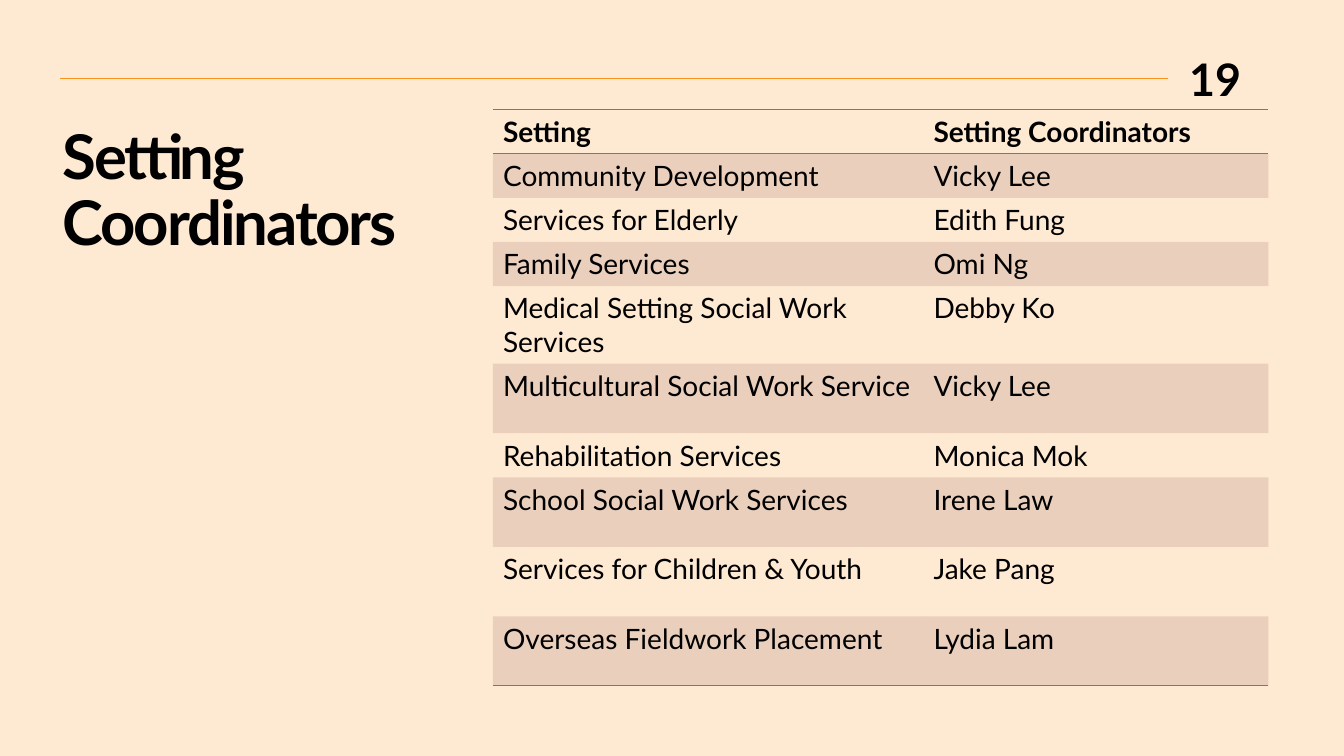
from lxml import etree
from pptx import Presentation
from pptx.dml.color import RGBColor
from pptx.enum.shapes import MSO_CONNECTOR
from pptx.enum.text import MSO_ANCHOR, MSO_AUTO_SIZE, PP_ALIGN
from pptx.oxml.ns import qn
from pptx.util import Inches, Pt

STRAIGHT = MSO_CONNECTOR.STRAIGHT
TOP = MSO_ANCHOR.TOP
FIXED = MSO_AUTO_SIZE.NONE
LEFT, RIGHT = PP_ALIGN.LEFT, PP_ALIGN.RIGHT

COLORS = {"paper": "FEE9D2", "ink": "000000", "accent": "F8931D", "rose": "9C6A6A"}
FONT = "Lato"
PLAIN_TABLE = "{2D5ABB26-0587-4C30-8999-92F81FD0307C}"

COORDINATORS = [
    ("Setting", "Setting Coordinators"),
    ("Community Development", "Vicky Lee"),
    ("Services for Elderly", "Edith Fung"),
    ("Family Services", "Omi Ng"),
    ("Medical Setting Social Work Services", "Debby Ko"),
    ("Multicultural Social Work Service", "Vicky Lee"),
    ("Rehabilitation Services", "Monica Mok"),
    ("School Social Work Services", "Irene Law"),
    ("Services for Children & Youth", "Jake Pang"),
    ("Overseas Fieldwork Placement", "Lydia Lam"),
]
TALL_ROWS = {4, 5, 7, 8, 9}


def color(name):
    return RGBColor.from_string(COLORS[name])


def write(frame, text, size, bold=False, align=LEFT, line=1.0, after=0, tracking=None):
    para = frame.paragraphs[0]
    para.alignment = align
    para.line_spacing = line
    para.space_before = Pt(0)
    para.space_after = Pt(after)
    span = para.add_run()
    span.text = text
    span.font.name = FONT
    span.font.size = Pt(size)
    span.font.bold = bold
    span.font.color.rgb = color("ink")
    if tracking is not None:
        span._r.get_or_add_rPr().set("spc", str(round(tracking * 100)))


class Page:
    def __init__(self, deck):
        self.width, self.height = deck.slide_width, deck.slide_height
        self.slide = deck.slides.add_slide(deck.slide_layouts[5])
        self.slide.background.fill.solid()
        self.slide.background.fill.fore_color.rgb = color("paper")

    def across(self, percent):
        return round(self.width * percent / 100)

    def down(self, percent):
        return round(self.height * percent / 100)

    def area(self, left, top, width, height):
        return self.across(left), self.down(top), self.across(width), self.down(height)

    def frame(self, box, insets):
        frame = box.text_frame
        frame.word_wrap = True
        frame.auto_size = FIXED
        frame.vertical_anchor = TOP
        frame.margin_left, frame.margin_top, frame.margin_right, frame.margin_bottom = map(Inches, insets)
        return frame

    def title(self, text, area, **style):
        box = self.slide.shapes.title
        box.left, box.top, box.width, box.height = self.area(*area)
        write(self.frame(box, (0, 0.05, 0.1, 0.05)), text, **style)

    def label(self, text, area, **style):
        box = self.slide.shapes.add_textbox(*self.area(*area))
        write(self.frame(box, (0, 0, 0, 0)), text, **style)

    def rule(self, start, end, height):
        line = self.slide.shapes.add_connector(
            STRAIGHT, self.across(start), self.down(height), self.across(end), self.down(height))
        line.line.color.rgb = color("accent")
        line.line.width = Pt(0.75)
        etree.SubElement(line._element.spPr, qn("a:effectLst"))

    def border(self, cell, side):
        edge = etree.Element(qn(f"a:{side}"), w=str(Pt(1)))
        fill = etree.SubElement(edge, qn("a:solidFill"))
        etree.SubElement(fill, qn("a:srgbClr"), val=COLORS["rose"])
        cell._tc.get_or_add_tcPr().insert(0, edge)

    def shade(self, cell):
        cell.fill.solid()
        cell.fill.fore_color.rgb = color("rose")
        tint = cell._tc.tcPr.find(".//" + qn("a:srgbClr"))
        etree.SubElement(tint, qn("a:alpha"), val="20000")

    def table(self, rows, left, top, widths, heights):
        table = self.slide.shapes.add_table(
            len(rows), len(widths), *self.area(left, top, sum(widths), sum(heights))).table
        table.first_row = table.horz_banding = False
        table._tbl.tblPr.find(qn("a:tableStyleId")).text = PLAIN_TABLE
        for column, width in zip(table.columns, widths):
            column.width = self.across(width)
        for index, (row, texts) in enumerate(zip(table.rows, rows)):
            row.height = self.down(heights[index])
            for cell, text in zip(row.cells, texts):
                write(cell.text_frame, text, size=20, bold=index == 0)
                if index % 2:
                    self.shade(cell)
                else:
                    cell.fill.background()
                if index in (0, len(rows) - 1):
                    self.border(cell, "lnB")
                if index == 0:
                    self.border(cell, "lnT")


def main():
    deck = Presentation()
    deck.slide_width, deck.slide_height = Inches(13.33), Inches(7.5)
    page = Page(deck)
    page.rule(4.5, 86.9, 10.4)
    page.title("Setting Coordinators", (4.65, 16, 30.45, 74),
               size=44, bold=True, line=0.9, tracking=-1.5)
    page.label("19", (84.85, 7.6, 7.5, 7.07),
               size=32, bold=True, align=RIGHT, line=0.9, after=6)
    heights = [9.2 if index in TALL_ROWS else 5.83 for index in range(len(COORDINATORS))]
    page.table(COORDINATORS, 36.68, 14.53, (32.03, 25.66), heights)
    deck.save("out.pptx")


if __name__ == "__main__":
    main()
